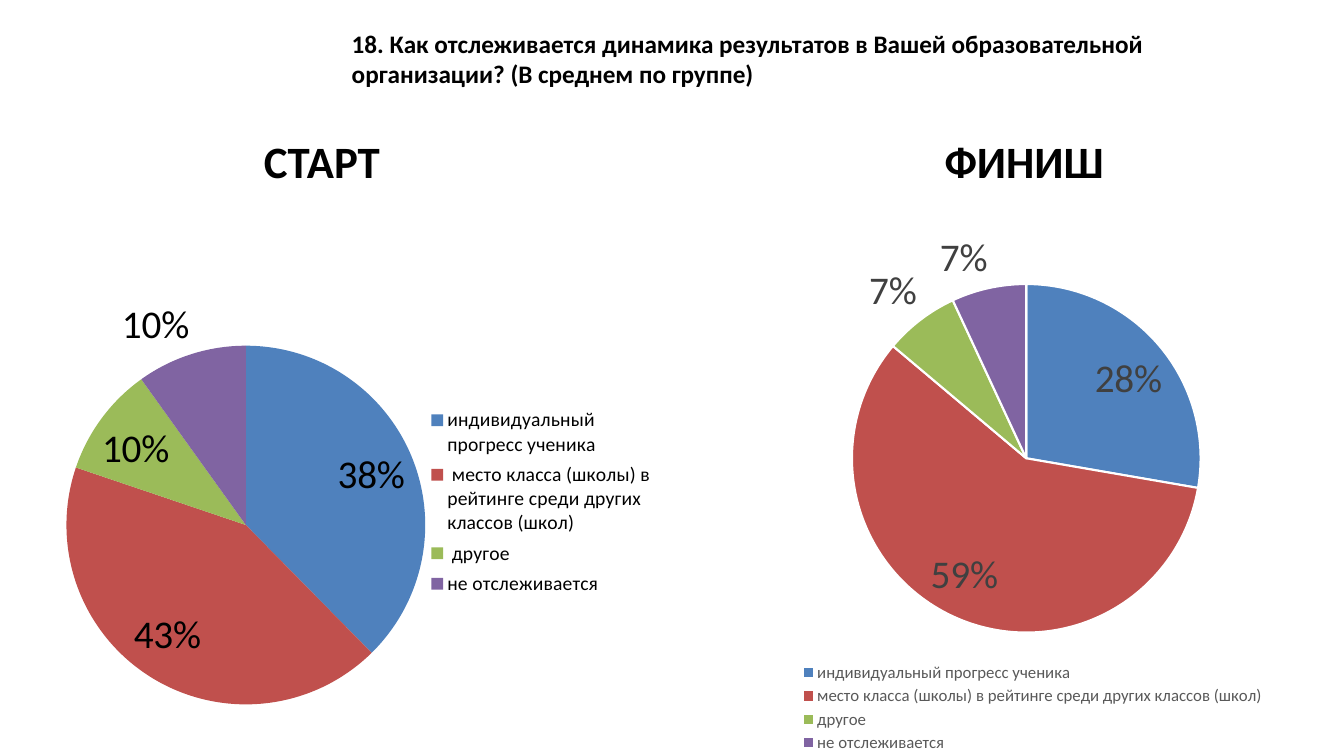
"""Build a slide comparing two pie charts: survey answers at the start and at the finish."""
from lxml.etree import SubElement
from pptx import Presentation
from pptx.chart.data import CategoryChartData
from pptx.dml.color import RGBColor
from pptx.enum.chart import XL_CHART_TYPE, XL_LABEL_POSITION, XL_LEGEND_POSITION
from pptx.enum.text import MSO_AUTO_SIZE
from pptx.oxml.ns import qn
from pptx.util import Inches, Pt


def add_text(text, left, top, width, height, size, wrap=True):
    """Add a bold black text box, measured in inches."""
    box = slide.shapes.add_textbox(Inches(left), Inches(top), Inches(width), Inches(height))
    box.text_frame.word_wrap = wrap
    box.text_frame.auto_size = MSO_AUTO_SIZE.SHAPE_TO_FIT_TEXT
    box.text_frame.text = text
    font = box.text_frame.paragraphs[0].runs[0].font
    font.name, font.size, font.bold = "Calibri", Pt(size), True
    font.color.rgb = RGBColor.from_string("000000")


def place(parent, before, inner, shares):
    """Give a chart part a manual layout as shares of the chart's size."""
    for old in parent.findall(qn("c:layout")):
        parent.remove(old)
    layout = SubElement(parent, qn("c:layout"))
    manual = SubElement(layout, qn("c:manualLayout"))
    if inner:
        SubElement(manual, qn("c:layoutTarget")).set("val", "inner")
    for tag in ("xMode", "yMode"):
        SubElement(manual, qn(f"c:{tag}")).set("val", "edge")
    for tag, share in zip("xywh", shares):
        SubElement(manual, qn(f"c:{tag}")).set("val", str(share))
    parent.find(qn(before)).addprevious(layout)


presentation = Presentation()
presentation.slide_width, presentation.slide_height = Inches(13.33), Inches(7.5)
slide = presentation.slides.add_slide(presentation.slide_layouts[6])

add_text("18. Как отслеживается динамика результатов в Вашей образовательной "
         "организации? (В среднем по группе)", 3.39, 0.23, 8.98, 1.01, 18)

slice_colors = ["4F81BD", "C0504D", "9BBB59", "8064A2"]
stages = [
    dict(heading="СТАРТ", heading_left=2.52, heading_width=1.36,
         frame=(0, 2.41, 6.59, 5.09), shares=(38, 43, 10, 10),
         answers=["индивидуальный прогресс ученика",
                  " место класса (школы) в рейтинге среди других классов (школ)",
                  " другое", "не отслеживается"],
         pie=(0.1, 0.2, 0.54, 0.7), legend=(0.66, 0.31, 0.33, 0.39),
         side=XL_LEGEND_POSITION.RIGHT, legend_size=14,
         legend_color="000000", label_color="000000", outline=None),
    dict(heading="ФИНИШ", heading_left=9.27, heading_width=1.8,
         frame=(6.9, 2.18, 6.43, 5.32), shares=(28, 59, 7, 7),
         answers=["индивидуальный прогресс ученика",
                  "место класса (школы) в рейтинге среди других классов (школ)",
                  "другое", "не отслеживается"],
         pie=(0.24, 0.12, 0.54, 0.65), legend=(0.14, 0.82, 0.76, 0.18),
         side=XL_LEGEND_POSITION.BOTTOM, legend_size=12,
         legend_color="595959", label_color="404040", outline="FFFFFF"),
]

for stage in stages:
    add_text(stage["heading"], stage["heading_left"], 1.28, stage["heading_width"], 0.64, 32, wrap=False)

    results = CategoryChartData()
    results.categories = stage["answers"]
    results.add_series("Series 1", stage["shares"])
    chart = slide.shapes.add_chart(XL_CHART_TYPE.PIE, *map(Inches, stage["frame"]), results).chart
    chart.has_title = False
    chart.font.name, chart.font.size = "Calibri", Pt(10)
    chart.font.color.rgb = RGBColor.from_string("000000")

    chart.has_legend = True
    legend = chart.legend
    legend.position = stage["side"]
    legend.include_in_layout = False
    legend.font.name, legend.font.size = "Calibri", Pt(stage["legend_size"])
    legend.font.color.rgb = RGBColor.from_string(stage["legend_color"])

    plot = chart.plots[0]
    plot.vary_by_categories = True
    place(chart._chartSpace.chart.plotArea, "c:pieChart", True, stage["pie"])
    place(legend._element, "c:overlay", False, stage["legend"])

    series = plot.series[0]
    labels = series.data_labels
    labels.show_value = True
    labels.number_format, labels.number_format_is_linked = '0"%"', False
    labels.position = XL_LABEL_POSITION.BEST_FIT
    labels.font.name, labels.font.size = "Calibri", Pt(28)
    labels.font.color.rgb = RGBColor.from_string(stage["label_color"])

    for index, color in enumerate(slice_colors):
        part = series.points[index].format
        part.fill.solid()
        part.fill.fore_color.rgb = RGBColor.from_string(color)
        if stage["outline"]:
            part.line.color.rgb = RGBColor.from_string(stage["outline"])
            part.line.width = Pt(1.5)
        else:
            part.line.fill.background()

presentation.save("out.pptx")
